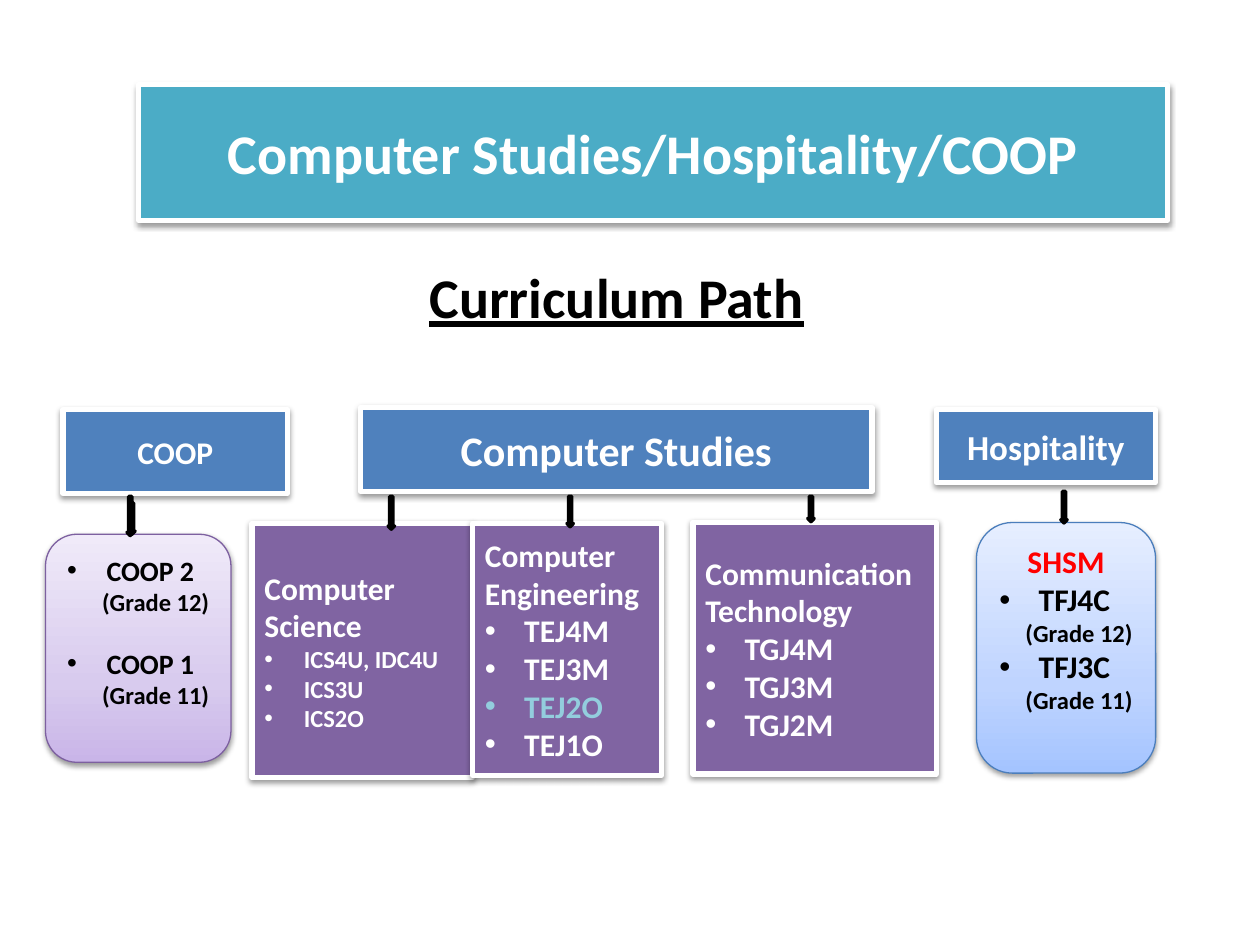
from copy import deepcopy

from lxml import etree
from pptx import Presentation
from pptx.dml.color import RGBColor
from pptx.enum import shapes, text
from pptx.oxml import parse_xml
from pptx.oxml.ns import nsdecls, qn
from pptx.util import Pt

WHITE, BLACK, RED = "FFFFFF", "000000", "FF0000"
TEAL, BLUE, PURPLE, PALE_BLUE = "4BACC6", "4F81BD", "8064A2", "93CDDD"
LILAC_FADE = ("C9B5E8", "D8CBEE", "F0EAF9")
SKY_FADE = ("A4C4FF", "BFD4FF", "E6EEFF")
LEFT, CENTER, RIGHT = text.PP_ALIGN.LEFT, text.PP_ALIGN.CENTER, text.PP_ALIGN.RIGHT
INDENT = Pt(22.5)


def color(value):
    return RGBColor.from_string(value)


def add_panel(slide, box, kind, line, line_width, fill=None):
    shape = slide.shapes.add_shape(kind, *map(Pt, box))
    shape.shadow.inherit = False
    if fill:
        shape.fill.solid()
        shape.fill.fore_color.rgb = color(fill)
    shape.line.color.rgb = color(line)
    shape.line.width = Pt(line_width)
    return shape


def add_shadow(shape):
    effects = shape._element.spPr.find(qn("a:effectLst"))
    effects.append(parse_xml(
        f'<a:outerShdw {nsdecls("a")} blurRad="40000" dist="20000" dir="5400000" rotWithShape="0">'
        '<a:srgbClr val="000000"><a:alpha val="38000"/></a:srgbClr></a:outerShdw>'))


def fade(shape, colors):
    shape.fill.gradient()
    stop_list = shape._element.spPr.find(".//" + qn("a:gsLst"))
    stop_list.append(deepcopy(stop_list[0]))
    for stop, value, position in zip(shape.fill.gradient_stops, colors, (0, 0.35, 1)):
        stop.color.rgb = color(value)
        stop.position = position
    shape.fill.gradient_angle = 90


def write(frame, lines):
    """Each line is (words, size, colour, alignment, bulleted, space before)."""
    frame.word_wrap = True
    for index, (words, size, ink, alignment, bulleted, before) in enumerate(lines):
        paragraph = frame.add_paragraph() if index else frame.paragraphs[0]
        paragraph.text = words
        paragraph.alignment = alignment
        paragraph.space_before = Pt(before)
        paragraph.font.name = "Calibri"
        paragraph.font.size = Pt(size)
        paragraph.font.bold = True
        paragraph.font.color.rgb = color(ink)
        if bulleted:
            properties = paragraph._p.get_or_add_pPr()
            properties.set("marL", str(INDENT))
            properties.set("indent", str(-INDENT))
            bullet_font = etree.Element(qn("a:buFont"), typeface="Arial")
            bullet = etree.Element(qn("a:buChar"), char="•")
            properties.insert_element_before(bullet_font, "a:defRPr")
            properties.insert_element_before(bullet, "a:defRPr")


def heading(words, size, ink=WHITE, alignment=CENTER):
    return words, size, ink, alignment, False, 0


def item(words, size, ink=WHITE, before=0):
    return words, size, ink, LEFT, True, before


def grade(words):
    return words, 14, BLACK, RIGHT, False, 0


def add_framed_box(slide, box, fill, lines):
    shape = add_panel(slide, box, shapes.MSO_SHAPE.RECTANGLE, WHITE, 3, fill)
    add_shadow(shape)
    shape.text_frame.vertical_anchor = text.MSO_ANCHOR.MIDDLE
    write(shape.text_frame, lines)


def add_rounded_card(slide, box, colors, outline, corner, bottom, lines):
    shape = add_panel(slide, box, shapes.MSO_SHAPE.ROUNDED_RECTANGLE, outline, 0.75)
    shape.adjustments[0] = corner
    fade(shape, colors)
    add_shadow(shape)
    shape.text_frame.vertical_anchor = text.MSO_ANCHOR.MIDDLE
    shape.text_frame.margin_bottom = Pt(bottom)
    write(shape.text_frame, lines)


def add_subtitle(slide, box, words):
    frame = slide.shapes.add_textbox(*map(Pt, box)).text_frame
    write(frame, [heading(words, 32, BLACK)])
    frame.paragraphs[0].font.underline = True


def add_arrows(slide, boxes):
    for left, top, height in boxes:
        add_panel(slide, (left, top, 3.6, height), shapes.MSO_SHAPE.DOWN_ARROW, BLACK, 2, WHITE)


def main():
    presentation = Presentation()
    presentation.slide_width, presentation.slide_height = Pt(720), Pt(540)
    slide = presentation.slides.add_slide(presentation.slide_layouts[6])

    # Title and subtitle
    add_framed_box(slide, (79.2, 48.4, 588, 77.6), TEAL,
                   [heading("Computer Studies/Hospitality/COOP", 32)])
    add_subtitle(slide, (26.6, 146.5, 651.6, 294), "Curriculum Path")

    # Departments
    for box, name, size in (
        ((206, 232.8, 292.3, 48), "Computer Studies", 24),
        ((535, 234, 125.3, 41.8), "Hospitality", 20),
        ((36, 234, 128.2, 48), "COOP", 18),
    ):
        add_framed_box(slide, box, BLUE, [heading(name, size)])

    # Computer studies streams
    for box, name, size, courses in (
        ((144, 299, 126, 145.4), "Computer Science", 14, ("ICS4U, IDC4U", "ICS3U", "ICS2O")),
        ((270, 299, 108, 144), "Computer Engineering", 18,
         ("TEJ4M", "TEJ3M", "TEJ2O", "TEJ1O")),
        ((396, 298.4, 139, 144), "Communication Technology", 18, ("TGJ4M", "TGJ3M", "TGJ2M")),
    ):
        items = [item(course, size, PALE_BLUE if course == "TEJ2O" else WHITE)
                 for course in courses]
        add_framed_box(slide, box, PURPLE, [heading(name, 18, alignment=LEFT)] + items)

    # COOP and hospitality courses
    add_rounded_card(slide, (26, 305.3, 106, 130.3), LILAC_FADE, "7D60A0", 0.17, 23, [
        item("COOP 2", 16, BLACK), grade("(Grade 12)"),
        item("COOP 1", 16, BLACK, before=17), grade("(Grade 11)"),
    ])
    add_rounded_card(slide, (558, 298.6, 102.4, 143.2), SKY_FADE, "4B7EBC", 0.2, 25.6, [
        heading("SHSM", 18, RED),
        item("TFJ4C", 18, BLACK), grade("(Grade 12)"),
        item("TFJ3C", 18, BLACK), grade("(Grade 11)"),
    ])

    # Arrows from departments to courses: left, top, height
    add_arrows(slide, (
        (73.6, 287.3, 18), (221.8, 283.7, 18.7), (324, 283.7, 17.3),
        (461.6, 283.7, 14.4), (606.2, 280.8, 18), (72.6, 283.7, 22.3),
    ))

    presentation.save("out.pptx")


if __name__ == "__main__":
    main()
